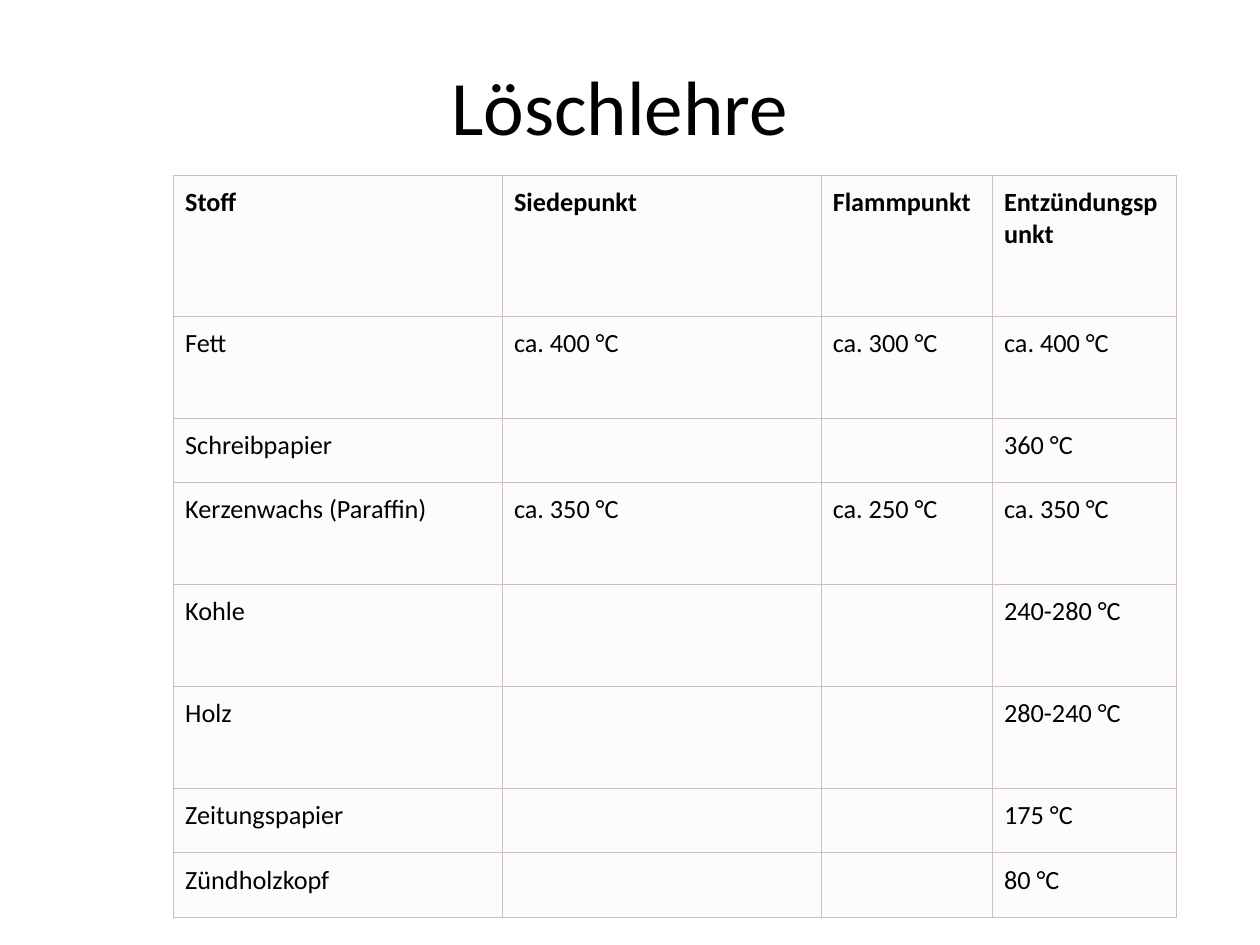
from dataclasses import dataclass

from lxml.etree import SubElement
from pptx import Presentation
from pptx.dml.color import RGBColor
from pptx.enum.text import MSO_ANCHOR, PP_ALIGN
from pptx.oxml.ns import qn
from pptx.util import Inches, Pt


@dataclass(frozen=True)
class Theme:
    font: str = "Calibri"
    text: str = "000000"
    cell: str = "FCFCFC"
    border: str = "CEC0C0"
    border_width: float = 0.75
    title_size: int = 44
    table_size: int = 15
    cell_margin: float = 0.09


THEME = Theme()

COLUMN_WIDTHS = [2.61, 2.53, 1.36, 1.46]
HEADER_HEIGHT, TALL, SHORT = 1.12, 0.81, 0.51
HEADERS = ["Stoff", "Siedepunkt", "Flammpunkt", "Entzündungspunkt"]
SUBSTANCES = [
    (TALL, ["Fett", "ca. 400 °C", "ca. 300 °C", "ca. 400 °C"]),
    (SHORT, ["Schreibpapier", "", "", "360 °C"]),
    (TALL, ["Kerzenwachs (Paraffin)", "ca. 350 °C", "ca. 250 °C", "ca. 350 °C"]),
    (TALL, ["Kohle", "", "", "240-280 °C"]),
    (TALL, ["Holz", "", "", "280-240 °C"]),
    (SHORT, ["Zeitungspapier", "", "", "175 °C"]),
    (SHORT, ["Zündholzkopf", "", "", "80 °C"]),
]


def write_text(frame, text, *, size, bold=False, align=PP_ALIGN.LEFT):
    paragraph = frame.paragraphs[0]
    paragraph.alignment = align
    run = paragraph.add_run()
    run.text = text
    run.font.name = THEME.font
    run.font.size = Pt(size)
    run.font.bold = bold
    run.font.color.rgb = RGBColor.from_string(THEME.text)


def add_title(slide, text):
    title = slide.shapes.title
    title.left, title.top = Inches(0.67), Inches(0.36)
    title.width, title.height = Inches(8.5), Inches(0.94)
    title.text_frame.vertical_anchor = MSO_ANCHOR.MIDDLE
    write_text(title.text_frame, text, size=THEME.title_size, align=PP_ALIGN.CENTER)


def draw_borders(cell):
    properties = cell._tc.get_or_add_tcPr()
    for side in ("a:lnL", "a:lnR", "a:lnT", "a:lnB"):
        line = SubElement(properties, qn(side), w=str(Pt(THEME.border_width)))
        fill = SubElement(line, qn("a:solidFill"))
        SubElement(fill, qn("a:srgbClr"), val=THEME.border)


def format_cell(cell, text, bold):
    margin = Inches(THEME.cell_margin)
    cell.margin_left = cell.margin_right = margin
    cell.margin_top = cell.margin_bottom = margin
    draw_borders(cell)
    cell.fill.solid()
    cell.fill.fore_color.rgb = RGBColor.from_string(THEME.cell)
    if text:
        write_text(cell.text_frame, text, size=THEME.table_size, bold=bold)


def add_substance_table(slide):
    rows = [(HEADER_HEIGHT, HEADERS), *SUBSTANCES]
    height = sum(row_height for row_height, _ in rows)
    table = slide.shapes.add_table(
        len(rows), len(HEADERS), Inches(1.38), Inches(1.39),
        Inches(sum(COLUMN_WIDTHS)), Inches(height),
    ).table
    table.horz_banding = False
    for column, width in zip(table.columns, COLUMN_WIDTHS):
        column.width = Inches(width)
    for index, (row_height, texts) in enumerate(rows):
        row = table.rows[index]
        row.height = Inches(row_height)
        for cell, text in zip(row.cells, texts):
            format_cell(cell, text, bold=index == 0)


def main():
    presentation = Presentation()
    presentation.slide_width, presentation.slide_height = Inches(10), Inches(7.5)
    slide = presentation.slides.add_slide(presentation.slide_layouts[0])
    subtitle = slide.placeholders[1].element
    subtitle.getparent().remove(subtitle)
    add_title(slide, "Löschlehre")
    add_substance_table(slide)
    presentation.save("out.pptx")


if __name__ == "__main__":
    main()
